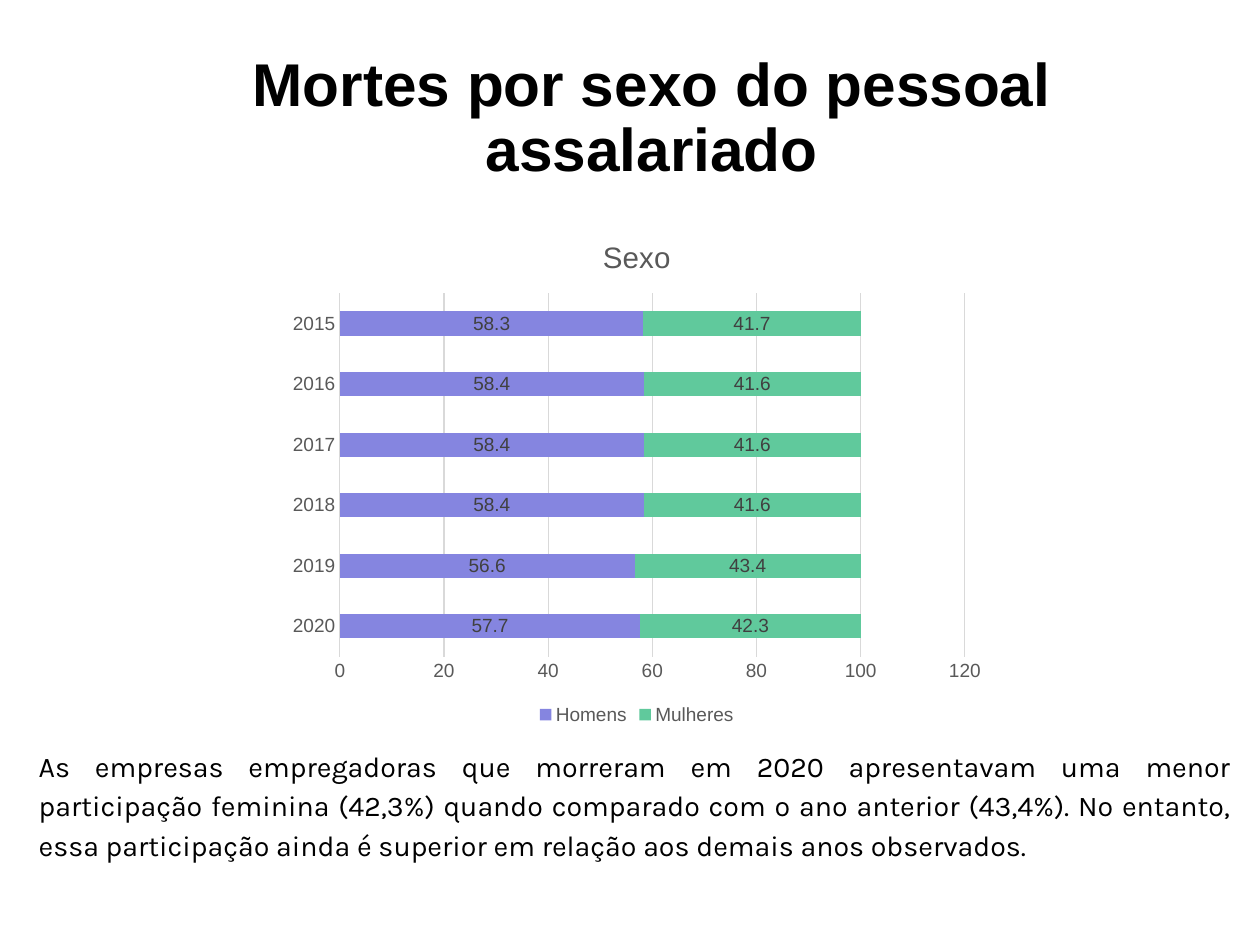
from pptx import Presentation
from pptx.chart.data import CategoryChartData
from pptx.dml.color import RGBColor
from pptx.enum.chart import XL_CHART_TYPE, XL_LABEL_POSITION, XL_LEGEND_POSITION, XL_TICK_MARK
from pptx.enum.text import MSO_ANCHOR, PP_ALIGN
from pptx.util import Pt

COLORS = {
    "text": "000000",
    "axis": "595959",
    "label": "404040",
    "grid": "D9D9D9",
    "Homens": "8585E0",
    "Mulheres": "60C99C",
}
YEARS = ["2020", "2019", "2018", "2017", "2016", "2015"]
SHARES = {
    "Homens": [57.7, 56.6, 58.4, 58.4, 58.4, 58.3],
    "Mulheres": [42.3, 43.4, 41.6, 41.6, 41.6, 41.7],
}
COMMENT = (
    "As empresas empregadoras que morreram em 2020 apresentavam uma menor "
    "participação feminina (42,3%) quando comparado com o ano anterior (43,4%). "
    "No entanto, essa participação ainda é superior em relação aos demais anos observados."
)


def rgb(name):
    return RGBColor.from_string(COLORS[name])


class SlideBuilder:
    heading_font = "Arial"
    body_font = "Karla"

    def __init__(self, prs):
        self.s = prs.slides.add_slide(prs.slide_layouts[5])

    def style(self, font, size, color, name=heading_font, bold=False):
        font.name = name
        font.size = Pt(size)
        font.bold = bold
        font.color.rgb = rgb(color)

    def title(self, text, x, y, w, h):
        sp = self.s.shapes.title
        sp.left, sp.top, sp.width, sp.height = Pt(x), Pt(y), Pt(w), Pt(h)
        tf = sp.text_frame
        tf.text = text
        tf.word_wrap = True
        tf.vertical_anchor = MSO_ANCHOR.MIDDLE
        p = tf.paragraphs[0]
        p.alignment = PP_ALIGN.CENTER
        p.line_spacing = 0.9
        self.style(p.runs[0].font, 38, "text", bold=True)

    def paragraph(self, text, x, y, w, h):
        tf = self.s.shapes.add_textbox(Pt(x), Pt(y), Pt(w), Pt(h)).text_frame
        tf.word_wrap = True
        tf.text = text
        p = tf.paragraphs[0]
        p.alignment = PP_ALIGN.JUSTIFY
        p.line_spacing = 1.15
        p.space_after = Pt(8)
        self.style(p.runs[0].font, 18, "text", self.body_font)

    def stacked_bars(self, title, categories, series, x, y, w, h):
        data = CategoryChartData()
        data.categories = categories
        for name, values in series.items():
            data.add_series(name, values)
        chart = self.s.shapes.add_chart(
            XL_CHART_TYPE.BAR_STACKED, Pt(x), Pt(y), Pt(w), Pt(h), data
        ).chart
        self.style(chart.font, 10, "text")

        chart.has_title = True
        chart.chart_title.include_in_layout = False
        tf = chart.chart_title.text_frame
        tf.text = title
        self.style(tf.paragraphs[0].runs[0].font, 18.6, "axis")

        chart.has_legend = True
        chart.legend.position = XL_LEGEND_POSITION.BOTTOM
        chart.legend.include_in_layout = False
        self.style(chart.legend.font, 12, "axis")

        for axis in (chart.category_axis, chart.value_axis):
            axis.major_tick_mark = XL_TICK_MARK.NONE
            axis.minor_tick_mark = XL_TICK_MARK.NONE
            self.style(axis.tick_labels.font, 12, "axis")
        value_axis = chart.value_axis
        value_axis.minimum_scale = 0
        value_axis.maximum_scale = 120
        value_axis.major_unit = 20
        value_axis.has_major_gridlines = True
        value_axis.format.line.fill.background()
        for line in (chart.category_axis.format.line, value_axis.major_gridlines.format.line):
            line.color.rgb = rgb("grid")
            line.width = Pt(0.75)

        plot = chart.plots[0]
        plot.gap_width = 150
        plot.overlap = 100
        plot.vary_by_categories = False
        for bars in plot.series:
            bars.format.fill.solid()
            bars.format.fill.fore_color.rgb = rgb(bars.name)
            labels = bars.data_labels
            labels.show_value = True
            labels.position = XL_LABEL_POSITION.CENTER
            self.style(labels.font, 12, "label")


def main():
    prs = Presentation()
    prs.slide_width = Pt(793.75)
    prs.slide_height = Pt(595.25)
    slide = SlideBuilder(prs)
    slide.title("Mortes por sexo do pessoal assalariado", 67.7, 28.3, 686, 94.3)
    slide.paragraph(COMMENT, 17.3, 464.8, 765.4, 81.4)
    slide.stacked_bars("Sexo", YEARS, SHARES, 175.5, 135.8, 451.4, 323.6)
    prs.save("out.pptx")


if __name__ == "__main__":
    main()
